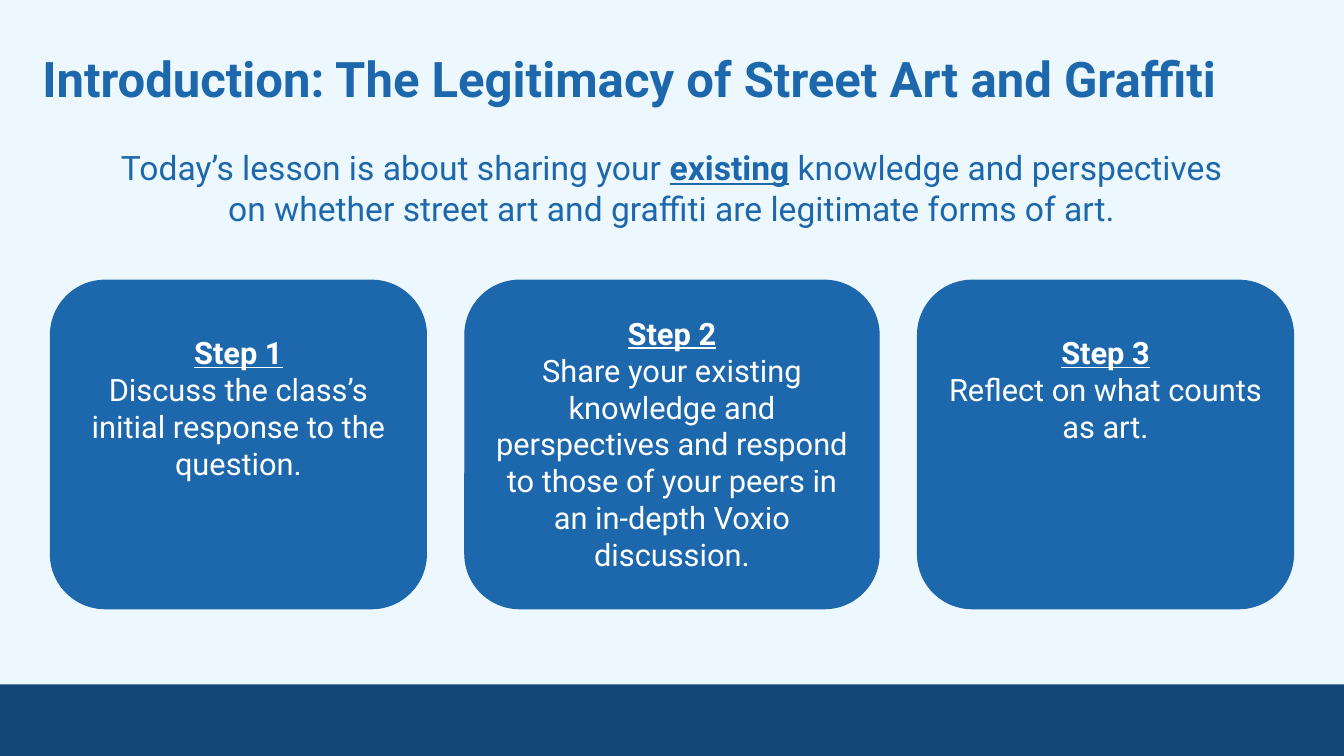
from pptx import Presentation
from pptx import util as u
from pptx.dml.color import RGBColor
from pptx.enum import shapes, text

PALE = RGBColor(0xEC, 0xF8, 0xFE)
BLUE = RGBColor(0x1D, 0x67, 0xAC)
NAVY = RGBColor(0x14, 0x47, 0x77)
WHITE = RGBColor(0xFF, 0xFF, 0xFF)
FONT = "Roboto"

# Each paragraph is a list of (words, emphasised) runs.
TITLE = "Introduction: The Legitimacy of Street Art and Graffiti"
LESSON = [
    ("Today’s lesson is about sharing your ", False),
    ("existing", True),
    (" knowledge and perspectives on whether street art and graffiti "
     "are legitimate forms of art.", False),
]
# Heading, task, card width, space above the heading (inches)
STEPS = [
    ("Step 1", "Discuss the class’s initial response to the question.", 3.73, 0.37),
    ("Step 2", "Share your existing knowledge and perspectives and respond to "
     "those of your peers in an in-depth Voxio discussion.", 4.11, 0.18),
    ("Step 3", "Reflect on what counts as art.", 3.73, 0.37),
]

WIDTH, HEIGHT = 13.33, 7.5
MARGIN, CARD_TOP, CARD_HEIGHT = 0.5, 2.78, 3.26
BAND_HEIGHT = 0.71
GAP = (WIDTH - 2 * MARGIN - sum(step[2] for step in STEPS)) / (len(STEPS) - 1)


def inches(*lengths):
    return [u.Inches(length) for length in lengths]


def set_frame(frame, inset, top=None):
    frame.word_wrap = True
    frame.auto_size = text.MSO_AUTO_SIZE.NONE
    frame.vertical_anchor = text.MSO_ANCHOR.TOP
    frame.margin_left = frame.margin_right = frame.margin_bottom = u.Inches(inset)
    frame.margin_top = u.Inches(inset if top is None else top)


def add_span(para, words, size, color, bold=False, underline=False):
    span = para.add_run()
    span.text = words
    font = span.font
    font.name, font.size = FONT, u.Pt(size)
    font.bold, font.underline = bold, underline
    font.color.rgb = color


def add_block(page, kind, place, color):
    block = page.shapes.add_shape(kind, *inches(*place))
    block.shadow.inherit = False
    block.fill.solid()
    block.fill.fore_color.rgb = color
    block.line.color.rgb = color
    block.line.width = u.Pt(0.75)
    return block


def add_card(page, left, step):
    heading, task, width, top = step
    card = add_block(page, shapes.MSO_SHAPE.ROUNDED_RECTANGLE,
                     (left, CARD_TOP, width, CARD_HEIGHT), BLUE)
    card.adjustments[0] = 0.167
    frame = card.text_frame
    set_frame(frame, 0.1, top)
    first, second = frame.paragraphs[0], frame.add_paragraph()
    for para, words, strong in ((first, heading, True), (second, task, False)):
        para.alignment = text.PP_ALIGN.CENTER
        add_span(para, words, 22, WHITE, strong, strong)


def main():
    deck = Presentation()
    deck.slide_width, deck.slide_height = inches(WIDTH, HEIGHT)
    page = deck.slides.add_slide(deck.slide_layouts[5])
    page.background.fill.solid()
    page.background.fill.fore_color.rgb = PALE

    band = add_block(page, shapes.MSO_SHAPE.RECTANGLE,
                     (0, HEIGHT - BAND_HEIGHT, WIDTH, BAND_HEIGHT), NAVY)
    band.line.fill.background()

    title = page.shapes.title
    title.left, title.top, title.width, title.height = inches(0.29, 0.35, 12.19, 0.86)
    set_frame(title.text_frame, 0.13)
    para = title.text_frame.paragraphs[0]
    para.alignment = text.PP_ALIGN.LEFT
    add_span(para, TITLE, 35, BLUE, bold=True)

    lesson = page.shapes.add_textbox(*inches(0.91, 1.36, 11.5, 1.82))
    set_frame(lesson.text_frame, 0.1)
    para = lesson.text_frame.paragraphs[0]
    para.alignment = text.PP_ALIGN.CENTER
    for words, strong in LESSON:
        add_span(para, words, 24, BLUE, strong, strong)

    left = MARGIN
    for step in STEPS:
        add_card(page, left, step)
        left += step[2] + GAP

    deck.save("out.pptx")


if __name__ == "__main__":
    main()
